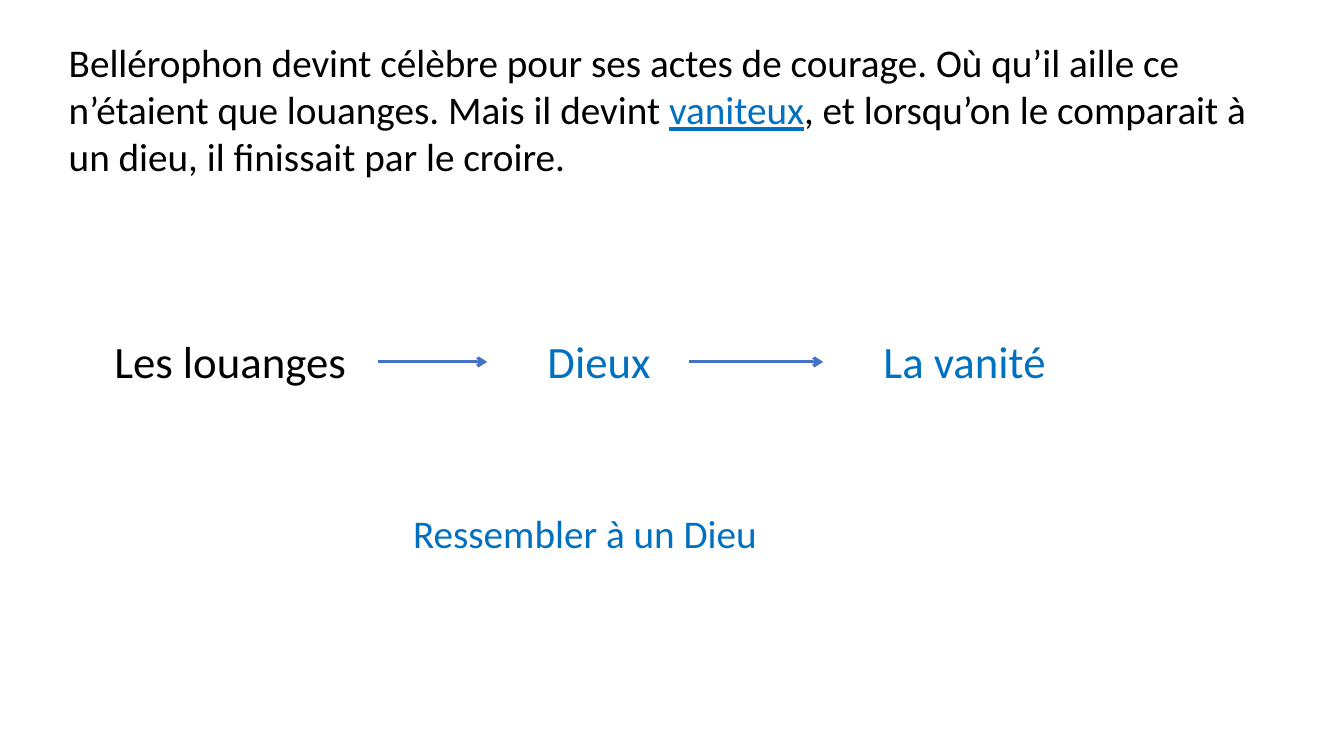
"""Build the slide on Bellérophon, from praise to vanity."""
from lxml.etree import SubElement
from pptx import Presentation
from pptx.dml.color import RGBColor
from pptx.enum.shapes import MSO_CONNECTOR
from pptx.enum.text import MSO_AUTO_SIZE, PP_ALIGN
from pptx.oxml.ns import qn
from pptx.util import Pt

COLORS = {"black": "000000", "blue": "0070C0", "arrow": "4472C4"}
CHAIN_TOP = 234.7
ARROW_Y = 258.5


def add_text(slide, box, size, runs, wrap=False):
    shape = slide.shapes.add_textbox(*[Pt(length) for length in box])
    text_frame = shape.text_frame
    text_frame.word_wrap = wrap
    text_frame.auto_size = MSO_AUTO_SIZE.SHAPE_TO_FIT_TEXT
    paragraph = text_frame.paragraphs[0]
    for text, color in runs:
        run = paragraph.add_run()
        run.text = text
        run.font.name = "Calibri"
        run.font.size = Pt(size)
        run.font.color.rgb = RGBColor.from_string(COLORS[color])
    return paragraph


presentation = Presentation()
presentation.slide_width = Pt(960)
presentation.slide_height = Pt(540)
slide = presentation.slides.add_slide(presentation.slide_layouts[6])

story = add_text(slide, (42, 24, 876, 108.7), 28, [
    ("Bellérophon devint célèbre pour ses actes de courage. Où qu’il aille ce "
     "n’étaient que louanges. Mais il devint ", "black"),
    ("vaniteux", "blue"),
    (", et lorsqu’on le comparait à un dieu, il finissait par le croire.", "black"),
], wrap=True)
story.runs[1].font.underline = True

for text, left, width, color, alignment in [
    ("Les louanges", 73.4, 182.2, "black", PP_ALIGN.CENTER),
    ("Dieux", 384, 96.5, "blue", PP_ALIGN.LEFT),
    ("La vanité", 624, 131.8, "blue", PP_ALIGN.LEFT),
]:
    step = add_text(slide, (left, CHAIN_TOP, width, 46), 32, [(text, color)])
    step.alignment = alignment

for start, end in [(270, 348), (492, 588)]:
    arrow = slide.shapes.add_connector(
        MSO_CONNECTOR.STRAIGHT, Pt(start), Pt(ARROW_Y), Pt(end), Pt(ARROW_Y))
    arrow.line.color.rgb = RGBColor.from_string(COLORS["arrow"])
    arrow.line.width = Pt(2.25)
    SubElement(arrow.line._get_or_add_ln(), qn("a:tailEnd"), type="arrow")
    SubElement(arrow._element.spPr, qn("a:effectLst"))

add_text(slide, (288, 360, 269.3, 41.2), 28, [("Ressembler à un Dieu", "blue")])

presentation.save("out.pptx")
